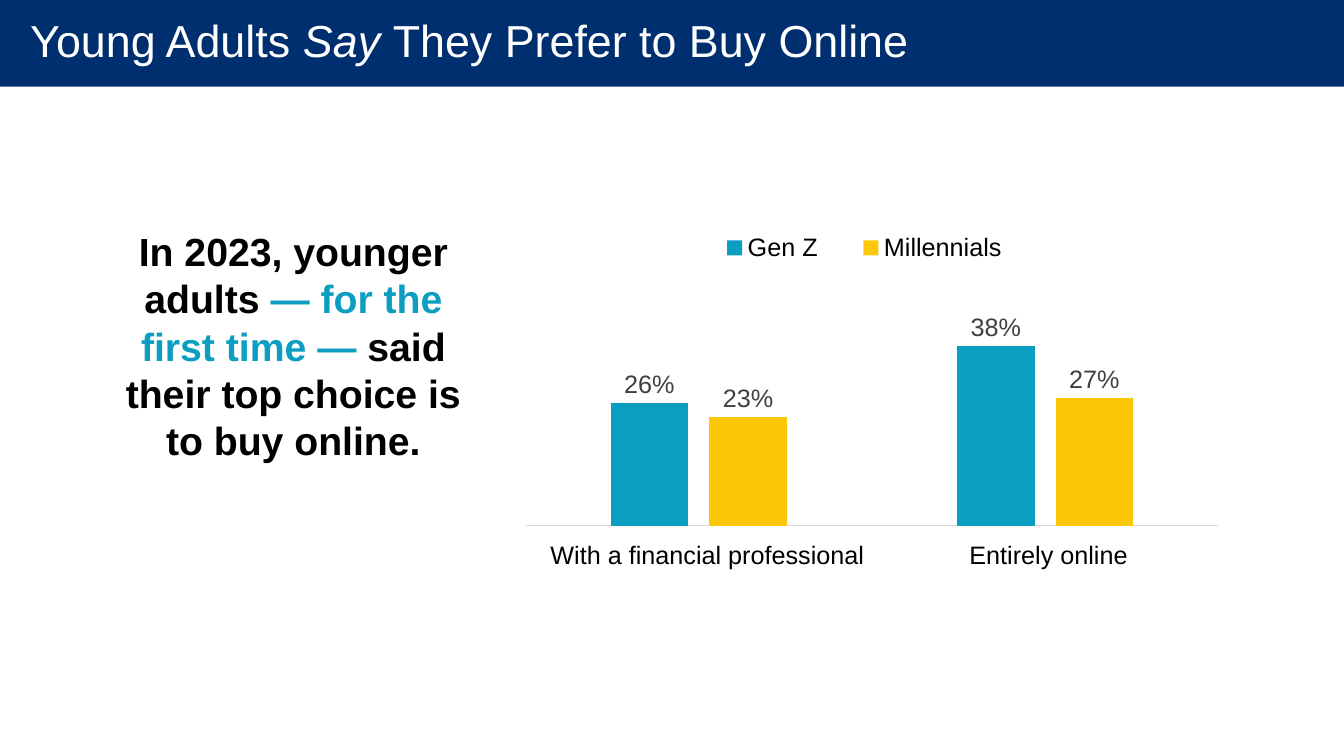
from lxml import etree
from pptx import Presentation
from pptx.chart.data import CategoryChartData
from pptx.dml.color import RGBColor
from pptx.enum.chart import (XL_CHART_TYPE as CT, XL_LABEL_POSITION as LP,
                             XL_LEGEND_POSITION as LG, XL_TICK_LABEL_POSITION as TL,
                             XL_TICK_MARK as TM)
from pptx.enum.shapes import MSO_SHAPE
from pptx.enum.text import MSO_ANCHOR, PP_ALIGN
from pptx.oxml.ns import qn
from pptx.util import Inches, Pt

FONT = "Arial"
NAVY, TEAL, GOLD = "002F70", "0B9EC1", "FAC809"
BLACK, WHITE, DARK_GRAY, LIGHT_GRAY = "000000", "FFFFFF", "404040", "D9D9D9"
CATEGORIES = ["With a financial professional", "Entirely online"]
SERIES = [("Gen Z", (0.26, 0.38), TEAL), ("Millennials", (0.23, 0.27), GOLD)]


def rgb(value):
    return RGBColor.from_string(value)


def set_font(font, size, color, bold=False, italic=False):
    font.name, font.size = FONT, Pt(size)
    font.color.rgb = rgb(color)
    font.bold, font.italic = bold, italic


def add_runs(p, runs, size):
    """Add (text, color, bold, italic) runs to a paragraph."""
    for text, color, bold, italic in runs:
        r = p.add_run()
        r.text = text
        set_font(r.font, size, color, bold, italic)


def add_title_bar(slide, x, y, w, h):
    bar = slide.shapes.add_shape(MSO_SHAPE.RECTANGLE, Inches(x), Inches(y), Inches(w), Inches(h))
    bar.shadow.inherit = False
    bar.fill.solid()
    bar.fill.fore_color.rgb = rgb(NAVY)
    bar.line.fill.background()
    tf = bar.text_frame
    tf.word_wrap = False
    tf.vertical_anchor = MSO_ANCHOR.MIDDLE
    tf.margin_left, tf.margin_right = Inches(0.3), Inches(0.2)
    tf.margin_top, tf.margin_bottom = 0, Inches(0.07)
    p = tf.paragraphs[0]
    p.alignment = PP_ALIGN.LEFT
    add_runs(p, [("Young Adults ", WHITE, False, False),
                 ("Say ", WHITE, False, True),
                 ("They Prefer to Buy Online", WHITE, False, False)], 32)


def add_centered_text(slide, x, y, w, h, runs, size):
    box = slide.shapes.add_textbox(Inches(x), Inches(y), Inches(w), Inches(h))
    tf = box.text_frame
    tf.word_wrap = True
    p = tf.paragraphs[0]
    p.alignment = PP_ALIGN.CENTER
    add_runs(p, runs, size)


def set_layout(parent, after, x, y, w, h, inner=False):
    """Place a chart part by fractions of the chart, following the named child."""
    for old in parent.findall(qn("c:layout")):
        parent.remove(old)
    layout = etree.Element(qn("c:layout"))
    manual = etree.SubElement(layout, qn("c:manualLayout"))
    values = [("layoutTarget", "inner")] if inner else []
    values += [("xMode", "edge"), ("yMode", "edge"), ("x", x), ("y", y), ("w", w), ("h", h)]
    for tag, value in values:
        etree.SubElement(manual, qn(f"c:{tag}")).set("val", str(value))
    if after is None:
        parent.insert(0, layout)
    else:
        parent.find(qn(after)).addnext(layout)


def add_preference_chart(slide, x, y, w, h):
    data = CategoryChartData(number_format="0%")
    data.categories = CATEGORIES
    for name, values, _ in SERIES:
        data.add_series(name, values)
    chart = slide.shapes.add_chart(CT.COLUMN_CLUSTERED, Inches(x), Inches(y),
                                   Inches(w), Inches(h), data).chart
    set_font(chart.font, 10, BLACK)
    chart.has_title = False

    chart.has_legend = True
    legend = chart.legend
    legend.position = LG.BOTTOM
    legend.include_in_layout = False
    set_font(legend.font, 18, BLACK)
    set_layout(legend._element, "c:legendPos", 0.25, 0.12, 0.48, 0.06)

    axis = chart.category_axis
    axis.major_tick_mark = axis.minor_tick_mark = TM.NONE
    axis.tick_label_position = TL.NONE
    axis.format.line.color.rgb = rgb(LIGHT_GRAY)
    axis.format.line.width = Pt(0.75)
    value_axis = chart.value_axis
    value_axis.visible = False
    value_axis.has_major_gridlines = False
    value_axis.minimum_scale, value_axis.maximum_scale = 0, 0.4

    plot = chart.plots[0]
    plot.gap_width, plot.overlap = 219, -27
    plot.vary_by_categories = False
    for series, (_, _, color) in zip(plot.series, SERIES):
        series.format.fill.solid()
        series.format.fill.fore_color.rgb = rgb(color)
        labels = series.data_labels
        labels.show_value = True
        labels.position = LP.OUTSIDE_END
        labels.number_format, labels.number_format_is_linked = "0%", False
        set_font(labels.font, 18, DARK_GRAY)
    plot_area = chart._chartSpace.chart.plotArea
    set_layout(plot_area, None, 0.024, 0.298, 0.953, 0.317, inner=True)


def add_category_captions(slide, y, h):
    for text, x, w in zip(CATEGORIES, (4.97, 9.3), (4.09, 2.2)):
        add_centered_text(slide, x, y, w, h, [(text, BLACK, False, False)], 18)


def main():
    prs = Presentation()
    prs.slide_width, prs.slide_height = Inches(13.33), Inches(7.5)
    slide = prs.slides.add_slide(prs.slide_layouts[6])
    add_title_bar(slide, 0, 0, 13.33, 0.86)
    add_centered_text(slide, 0.98, 2.21, 3.86, 3.1, [
        ("In 2023, younger adults ", BLACK, True, False),
        ("— for the first time — ", TEAL, True, False),
        ("said their top choice is to buy online.", BLACK, True, False)], 28)
    add_preference_chart(slide, 5.04, 1.57, 7.21, 5.93)
    add_category_captions(slide, 5.3, 0.4)
    prs.save("out.pptx")


if __name__ == "__main__":
    main()
